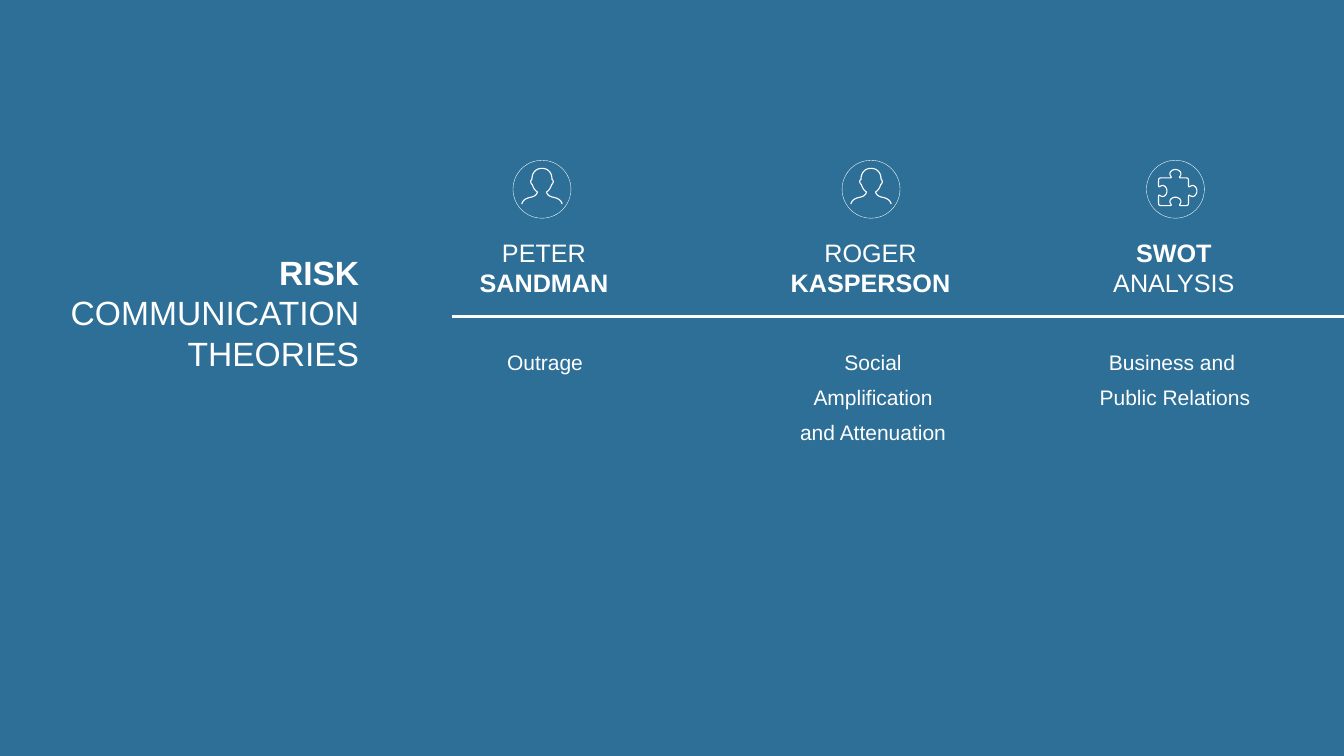
from dataclasses import dataclass

from lxml import etree
from pptx import Presentation
from pptx.dml.color import RGBColor
from pptx.enum import shapes, text
from pptx.oxml.ns import qn
from pptx.util import Pt


@dataclass
class Theme:
    back: RGBColor = RGBColor(0x2D, 0x6F, 0x96)
    ink: RGBColor = RGBColor(0xFF, 0xFF, 0xFF)
    font: str = "Arial"
    title: int = 48
    head: int = 36
    body: int = 30
    rule: float = 5
    ring: float = 0.5
    icon: float = 1.6


def curve(pts, steps=8):
    out = [pts[0]]
    for i in range(0, len(pts) - 1, 3):
        a, b, c, d = pts[i:i + 4]
        for k in range(1, steps + 1):
            t = k / steps
            s = 1 - t
            out.append(tuple(
                s ** 3 * p + 3 * s * s * t * q + 3 * s * t * t * r + t ** 3 * e
                for p, q, r, e in zip(a, b, c, d)))
    return out


def mirror(half):
    return [(-x, y) for x, y in reversed(half)] + half[1:]


def bust():
    half = [(0, -29.9), (8.6, -29.9), (14.4, -23.8), (14.4, -14),
            (17.3, -12.2), (16.2, -8.6), (13.7, -6.5),
            (12.2, -1.4), (10.1, 1.4), (6.5, 4),
            (7.2, 7.2), (10.1, 10.1), (15.1, 11.2),
            (22.3, 12.6), (27.4, 15.1), (28.8, 21.2)]
    return curve(mirror(half))


def puzzle():
    left, top, right, base, mid, bend = -24.1, -16.2, 18.7, 23.4, 2.5, 6.5
    half = [(0, 12), (4.3, 12), (7.9, 9), (7.9, 5.8),
            (7.9, 2.5), (3.6, 0.4), (7.6, 0)]
    knob = curve(mirror(half))

    def corner(x, y, ax, ay, bx, by):
        a, b = (x + ax * bend, y + ay * bend), (x + bx * bend, y + by * bend)
        return curve([a, (x, y), (x, y), b])

    return (corner(left, top, 0, 1, 1, 0)
            + [(x, top - y) for x, y in knob]
            + corner(right, top, -1, 0, 0, 1)
            + [(right + y, mid + x) for x, y in knob]
            + corner(right, base, 0, -1, -1, 0)
            + [(x, base - y) for x, y in reversed(knob)]
            + corner(left, base, 1, 0, 0, -1)
            + [(left + y, mid + x) for x, y in reversed(knob)])


class Deck:
    def __init__(self, theme, wide, high):
        self.theme = theme
        self.prs = Presentation()
        self.prs.slide_width, self.prs.slide_height = Pt(wide), Pt(high)
        self.page = self.prs.slides.add_slide(self.prs.slide_layouts[5])
        fill = self.page.background.fill
        fill.solid()
        fill.fore_color.rgb = theme.back

    def words(self, frame, paras, size, align, space=1.0):
        frame.word_wrap = True
        frame.auto_size = text.MSO_AUTO_SIZE.NONE
        frame.vertical_anchor = text.MSO_ANCHOR.TOP
        for i, runs in enumerate(paras):
            para = frame.paragraphs[0] if i == 0 else frame.add_paragraph()
            para.text = "".join(part for part, bold in runs[:1])
            for part, bold in runs[1:]:
                para.add_run().text = part
            para.alignment = align
            para.line_spacing = space
            marks = [bold for part, bold in runs]
            for k, run in enumerate(para.runs):
                font = run.font
                font.name, font.size = self.theme.font, Pt(size)
                font.bold = marks[min(k, len(marks) - 1)]
                font.color.rgb = self.theme.ink

    def title(self, box, paras):
        shape = self.page.shapes.title
        shape.left, shape.top, shape.width, shape.height = map(Pt, box)
        self.words(shape.text_frame, paras, self.theme.title,
                   text.PP_ALIGN.RIGHT)

    def label(self, box, paras, size, space=1.0):
        shape = self.page.shapes.add_textbox(*map(Pt, box))
        self.words(shape.text_frame, paras, size, text.PP_ALIGN.CENTER, space)

    def stroke(self, shape, width):
        shape.line.color.rgb = self.theme.ink
        shape.line.width = Pt(width)

    def rule(self, x, y, end):
        line = self.page.shapes.add_connector(
            shapes.MSO_CONNECTOR.STRAIGHT, Pt(end), Pt(y), Pt(x), Pt(y))
        self.stroke(line, self.theme.rule)
        etree.SubElement(line.element.spPr, qn("a:effectLst"))

    def ring(self, x, y, size):
        shape = self.page.shapes.add_shape(
            shapes.MSO_SHAPE.OVAL, Pt(x), Pt(y), Pt(size), Pt(size))
        shape.shadow.inherit = False
        shape.fill.background()
        self.stroke(shape, self.theme.ring)

    def icon(self, x, y, pts, close):
        pts = [(Pt(a), Pt(b)) for a, b in pts]
        pen = self.page.shapes.build_freeform(*pts[0], scale=1.0)
        pen.add_line_segments(pts[1:], close=close)
        shape = pen.convert_to_shape(Pt(x), Pt(y))
        shape.shadow.inherit = False
        shape.fill.background()
        self.stroke(shape, self.theme.icon)


def main():
    theme = Theme()
    wide, high = 1920.24, 1080
    deck = Deck(theme, wide, high)
    deck.rule(645.84, 452.16, wide)
    deck.title((60.48, 356.4, 460.08, 181.44),
               [[("RISK ", True), ("COMMUNICATION THEORIES", False)]])

    person, piece = (bust(), False), (puzzle(), True)
    cols = [
        (642.96, 662.4, 732.96, person,
         [[("PETER", False), (" SANDMAN", True)]],
         ["Outrage"], 55.44),
        (1109.52, 1131.12, 1203.12, person,
         [[("ROGER", False)], [("KASPERSON", True)]],
         ["Social Amplification", "and Attenuation"], 157.68),
        (1542.96, 1562.4, 1638, piece,
         [[("SWOT ", True), ("ANALYSIS", False)]],
         ["Business and \vPublic Relations"], 106.56),
    ]
    size, top = 82.8, 228.96
    for head, body, ring, mark, name, lines, tall in cols:
        deck.label((head, 335.52, 268.56, 94.32), name, theme.head)
        deck.label((body, 480.96, 232.56, tall),
                   [[(line, False)] for line in lines], theme.body, 1.4)
        deck.ring(ring, top, size)
        deck.icon(ring + size / 2, top + size / 2, *mark)
    deck.prs.save("out.pptx")


if __name__ == "__main__":
    main()
